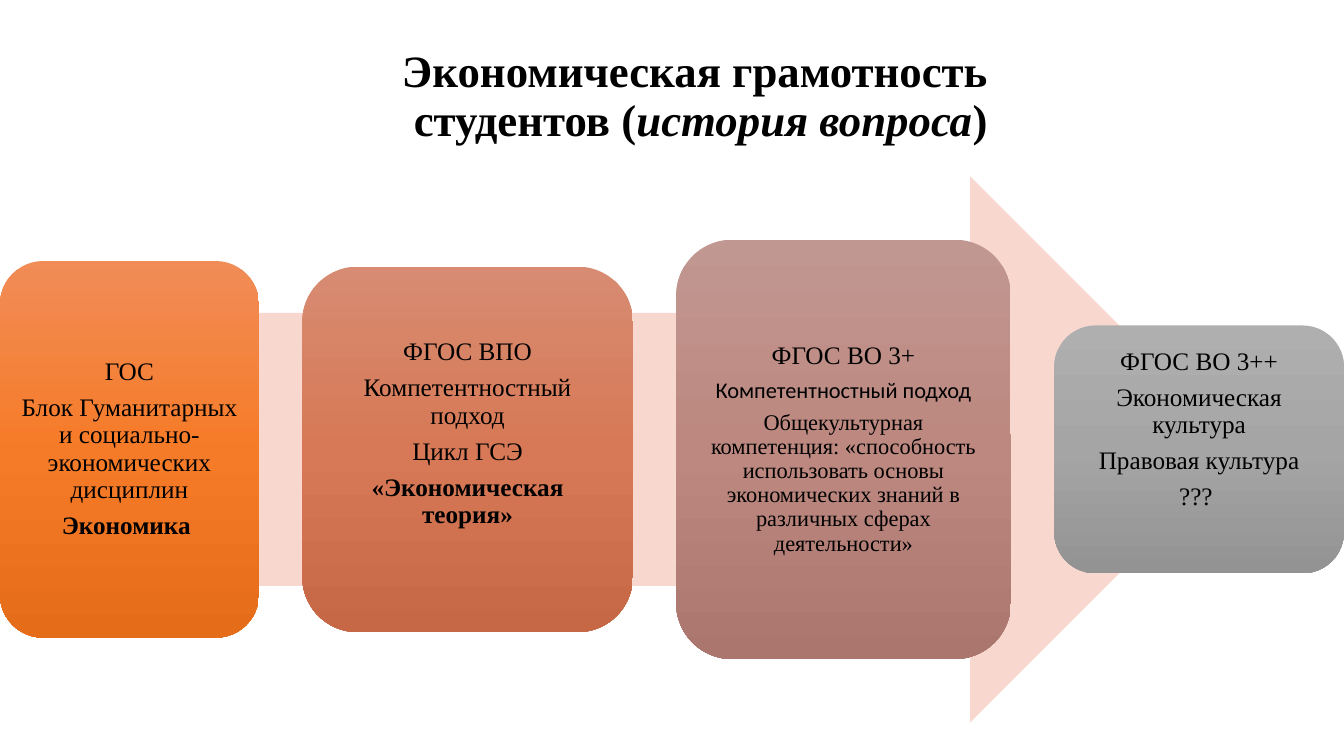
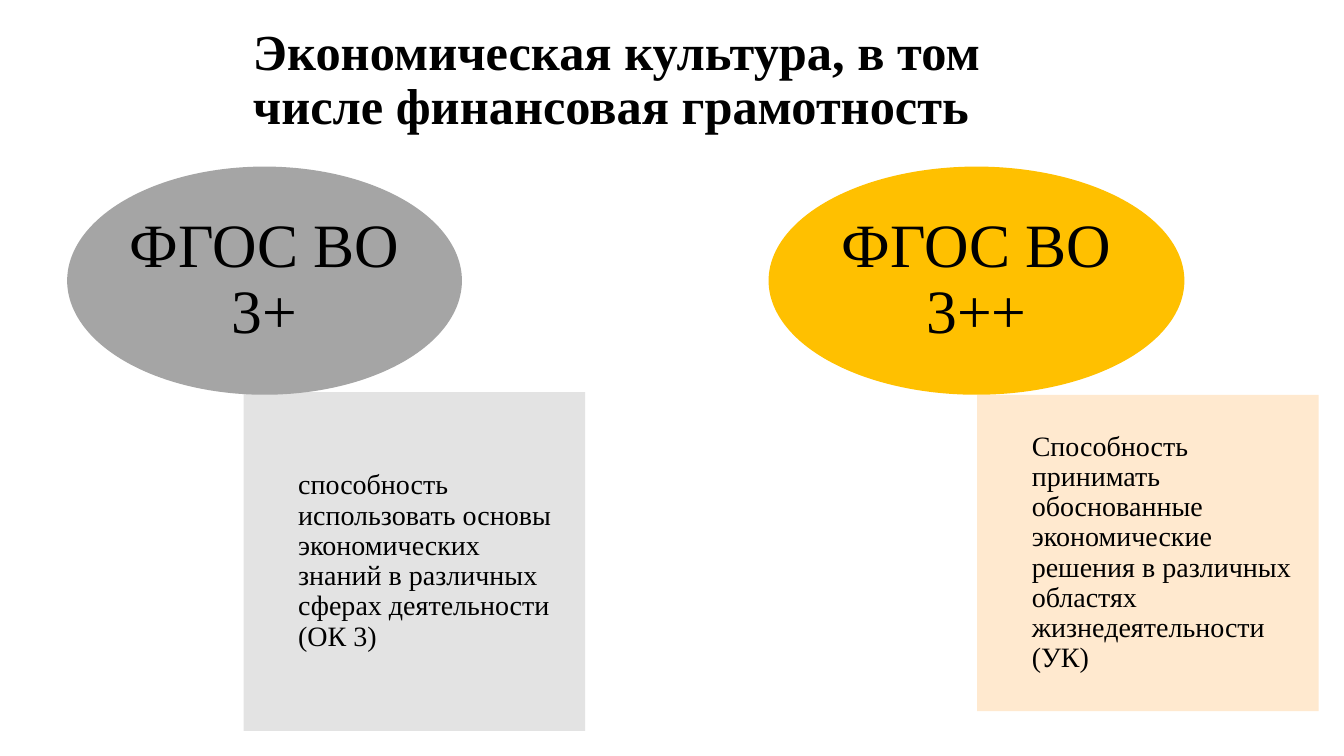
"""Build two slides on the economic literacy of students."""
from copy import deepcopy

from pptx import Presentation
from pptx.dml.color import RGBColor
from pptx.enum.shapes import MSO_SHAPE
from pptx.enum.text import MSO_ANCHOR, MSO_AUTO_SIZE, PP_ALIGN
from pptx.oxml.ns import qn
from pptx.util import Pt

WIDTH, HEIGHT = 960, 540
SERIF, SANS = "Times New Roman", "Calibri"
BLACK, PEACH = "000000", "F8D7CE"
MIDDLE = 321
LEFT, CENTER = PP_ALIGN.LEFT, PP_ALIGN.CENTER

HISTORY = [
    ("Экономическая грамотность \nстудентов (", {}),
    ("история вопроса", {"italic": True}),
    (")", {}),
]
CULTURE = [("Экономическая культура, в том числе финансовая грамотность", {})]

STAGES = [
    {"size": (185, 269), "fill": ("F18C57", "F67B28", "E56C19"), "lift": 0,
     "text": [("ГОС", {}),
              ("Блок Гуманитарных и социально-экономических дисциплин", {}),
              ("Экономика ", {"bold": True})]},
    {"size": (236, 261), "fill": ("D78B72", "D77956", "C66846"), "lift": 22,
     "text": [("ФГОС ВПО", {}),
              ("Компетентностный подход", {}),
              ("Цикл ГСЭ", {}),
              ("«Экономическая теория»", {"bold": True})]},
    {"size": (239, 299.5), "fill": ("C19791", "BC8880", "AA766E"), "lift": 0,
     "text": [("ФГОС ВО 3+", {}),
              ("Компетентностный подход", {"size": 16, "name": SANS}),
              ("Общекультурная компетенция: «способность использовать основы "
               "экономических знаний в различных сферах деятельности»",
               {"size": 16})]},
    {"size": (207, 177), "fill": ("AFAFAF", "A5A5A5", "939393"), "lift": 28,
     "text": [("ФГОС ВО 3++", {}),
              ("Экономическая культура", {}),
              ("Правовая культура", {}),
              ("??? ", {})]},
]

SKILLS = [
    {"name": "ФГОС ВО 3+", "oval": (48, 119, 282, 163), "dark": "A5A5A5",
     "card": (174, 280, 244, 242), "pale": "E3E3E3",
     "text": "способность использовать основы экономических знаний "
             "в различных сферах деятельности (ОК 3)"},
    {"name": "ФГОС ВО 3++", "oval": (549, 119, 297, 163), "dark": "FFC000",
     "card": (698, 282, 244, 226), "pale": "FFE9CF",
     "text": "Способность принимать обоснованные экономические решения "
             "в различных областях жизнедеятельности (УК)"},
]


def color(code):
    """Turn a hex string into a colour."""
    return RGBColor.from_string(code)


def add_run(para, text, size, name=SERIF, bold=False, italic=False):
    """Add one run, with line breaks where the text has them."""
    for i, part in enumerate(text.split("\n")):
        if i:
            para.add_line_break()
        run = para.add_run()
        run.text = part
        font = run.font
        font.size, font.name = Pt(size), name
        font.bold, font.italic = bold, italic
        font.color.rgb = color(BLACK)


def add_title(slide, box, runs, size, align):
    """Place and fill the title placeholder."""
    title = slide.shapes.title
    title.left, title.top, title.width, title.height = map(Pt, box)
    frame = title.text_frame
    frame.auto_size = MSO_AUTO_SIZE.NONE
    frame.vertical_anchor = MSO_ANCHOR.MIDDLE
    para = frame.paragraphs[0]
    para.alignment, para.line_spacing = align, 0.9
    for text, style in runs:
        add_run(para, text, size, bold=True, **style)


def add_block(slide, kind, box, fill):
    """Add a flat shape, filled with one colour or a gradient from the top."""
    shape = slide.shapes.add_shape(kind, *map(Pt, box))
    shape.shadow.inherit = False
    shape.line.fill.background()
    if isinstance(fill, str):
        shape.fill.solid()
        shape.fill.fore_color.rgb = color(fill)
        return shape
    shape.fill.gradient()
    shape.fill.gradient_angle = 270
    stops = shape._element.spPr.find(".//" + qn("a:gsLst"))
    stops.insert(1, deepcopy(stops[0]))
    for i, stop in enumerate(shape.fill.gradient_stops):
        stop.color.rgb = color(fill[i])
        stop.position = i / 2
    return shape


def add_text(shape, lines, size, insets, align=CENTER):
    """Write paragraphs into a shape, each followed by 35% of its size."""
    frame = shape.text_frame
    frame.word_wrap = True
    frame.vertical_anchor = MSO_ANCHOR.MIDDLE
    (frame.margin_left, frame.margin_top,
     frame.margin_right, frame.margin_bottom) = map(Pt, insets)
    for i, (text, style) in enumerate(lines):
        para = frame.add_paragraph() if i else frame.paragraphs[0]
        look = {"size": size, **style}
        para.alignment, para.line_spacing = align, 0.9
        para.space_after = Pt(0.35 * look["size"])
        add_run(para, text, **look)


def draw_stages(slide):
    """Draw the arrow and the stages spread evenly along it."""
    add_title(slide, (210, 25, 581, 89), HISTORY, 32, CENTER)
    add_block(slide, MSO_SHAPE.RIGHT_ARROW,
              (72, MIDDLE - 195, 816, 390), PEACH)
    used = sum(stage["size"][0] for stage in STAGES)
    gap = (WIDTH - used) / (len(STAGES) - 1)
    left = 0
    for stage in STAGES:
        wide, high = stage["size"]
        box = (left, MIDDLE - high / 2, wide, high)
        shape = add_block(slide, MSO_SHAPE.ROUNDED_RECTANGLE,
                          box, stage["fill"])
        add_text(shape, stage["text"], 18, (5, 5, 5, 5 + stage["lift"]))
        left += wide + gap


def draw_skills(slide):
    """Draw each standard as an oval above its card."""
    add_title(slide, (173.5, 13, 626, 90), CULTURE, 36, LEFT)
    for skill in SKILLS:
        card = add_block(slide, MSO_SHAPE.RECTANGLE,
                         skill["card"], skill["pale"])
        add_text(card, [(skill["text"], {})], 20,
                 (39, 11.5, 11.5, 11.5), LEFT)
        oval = add_block(slide, MSO_SHAPE.OVAL, skill["oval"], skill["dark"])
        add_text(oval, [(skill["name"], {})], 44, (0, 0, 0, 0))


def main():
    """Build and save the deck."""
    deck = Presentation()
    deck.slide_width, deck.slide_height = Pt(WIDTH), Pt(HEIGHT)
    for draw in (draw_stages, draw_skills):
        draw(deck.slides.add_slide(deck.slide_layouts[5]))
    deck.save("out.pptx")


if __name__ == "__main__":
    main()
